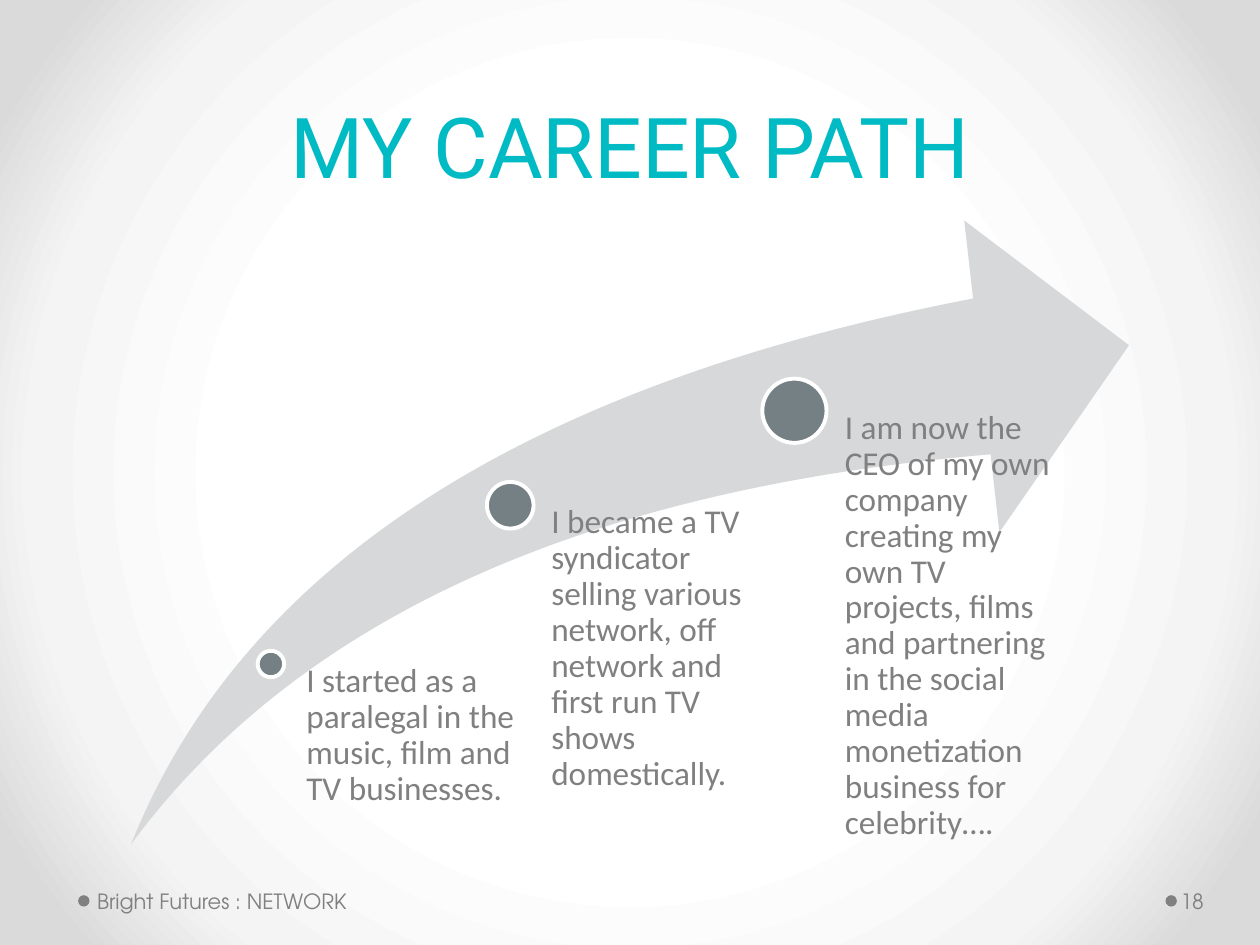
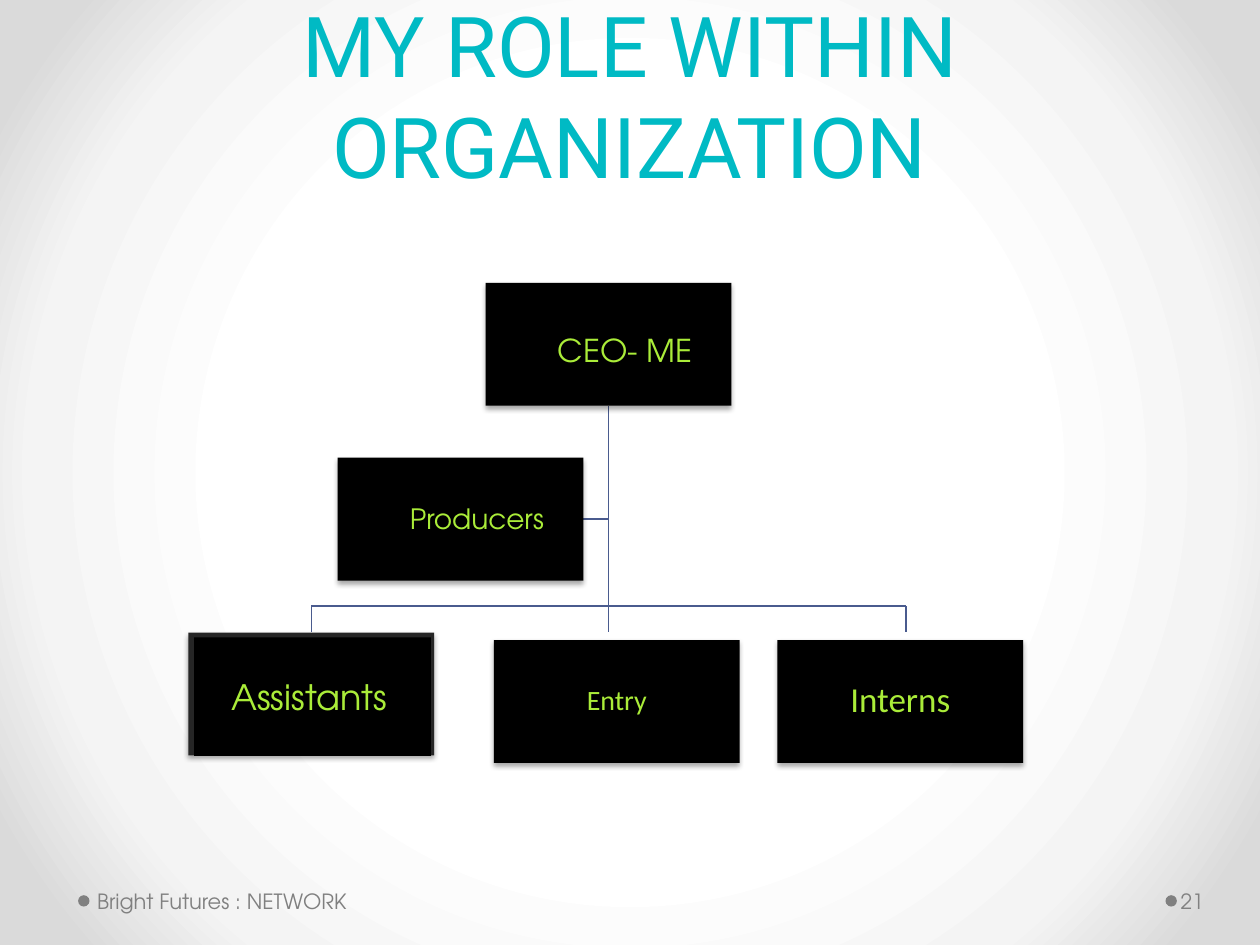
from lxml import etree
from pptx import Presentation
from pptx.dml.color import RGBColor
from pptx.enum.shapes import MSO_CONNECTOR, MSO_SHAPE
from pptx.enum.text import MSO_ANCHOR, PP_ALIGN
from pptx.oxml import parse_xml
from pptx.oxml.ns import nsdecls, qn
from pptx.util import Inches, Pt

COLUMNS, ROWS, CELL = 100, 75, Inches(0.1)
BLANK_LAYOUT = 6

TEAL = RGBColor(0x00, 0xBA, 0xC4)
GREY = RGBColor(0x80, 0x80, 0x80)
SILVER = RGBColor(0xD6, 0xD8, 0xD9)
SLATE = RGBColor(0x75, 0x80, 0x85)
WHITE = RGBColor(0xFF, 0xFF, 0xFF)
MIST = RGBColor(0xF4, 0xF4, 0xF4)
ASH = RGBColor(0xDA, 0xDA, 0xDA)
BLACK = RGBColor(0x00, 0x00, 0x00)
CHARCOAL = RGBColor(0x26, 0x26, 0x26)
LIME = RGBColor(0xAA, 0xEC, 0x39)
NAVY = RGBColor(0x4A, 0x5B, 0x8E)
BACKDROP_STOPS = ((50, WHITE), (76, MIST), (92, ASH))

TITLE_FONT, BODY_FONT, LABEL_FONT = "Roboto", "Calibri", "TeX Gyre Adventor"
OVAL, RECTANGLE, SWOOSH = MSO_SHAPE.OVAL, MSO_SHAPE.RECTANGLE, MSO_SHAPE.SWOOSH_ARROW
STRAIGHT = MSO_CONNECTOR.STRAIGHT
LEFT, CENTER = PP_ALIGN.LEFT, PP_ALIGN.CENTER
TOP, MIDDLE, BOTTOM = MSO_ANCHOR.TOP, MSO_ANCHOR.MIDDLE, MSO_ANCHOR.BOTTOM

TITLE_AREA = (5, 1.5, 90, 14.5)
FOOTER_TOP, FOOTER_HEIGHT = 69.5, 4
ORGANIZER = "Bright Futures : NETWORK"
ARROW_AREA = (10.4, 17.5, 79.2, 49.5)
ARROW_BOTTOM = 67
BOX_WIDTH, BOX_HEIGHT = 19.5, 9.75
TITLE_MARGINS = (1, 0.5, 1, 0.5)
LABEL_MARGINS = (0.5, 0.5, 1, 0.5)
BOX_MARGINS = (0.4, 0.4, 0.4, 0.4)

MILESTONES = (
    (21.5, 52.7, 2.1, 23.2, 18.5,
     "I started as a paralegal in the music, film and TV businesses."),
    (40.5, 40.1, 3.7, 41.8, 19,
     "I became a TV syndicator selling various network, off network and "
     "first run TV shows domestically."),
    (63.05, 32.6, 5.1, 64.35, 19,
     "I am now the CEO of my own company creating my own TV projects, films "
     "and partnering in the social media monetization business for celebrity…."),
)


def cells(*lengths):
    """Turn grid lengths into slide units."""
    return [round(length * CELL) for length in lengths]


def write(shape, text, font, size, color, margins, align=CENTER, anchor=MIDDLE,
          spacing=None):
    """Put one formatted paragraph into a shape."""
    frame = shape.text_frame
    left, top, right, bottom = cells(*margins)
    layout = {"word_wrap": True, "vertical_anchor": anchor, "margin_left": left,
              "margin_top": top, "margin_right": right, "margin_bottom": bottom}
    for name, value in layout.items():
        setattr(frame, name, value)
    paragraph = frame.paragraphs[0]
    paragraph.alignment = align
    paragraph.line_spacing = spacing
    run = paragraph.add_run()
    run.text = text
    for name, value in {"name": font, "size": Pt(size)}.items():
        setattr(run.font, name, value)
    run.font.color.rgb = color


def add_label(slide, area, *content, **layout):
    """Add text without a visible frame."""
    write(slide.shapes.add_textbox(*cells(*area)), *content, **layout)


def add_solid(slide, preset, area, fill, outline=None):
    """Add a flat filled shape, outlined on request."""
    solid = slide.shapes.add_shape(preset, *cells(*area))
    solid.shadow.inherit = False
    solid.fill.solid()
    solid.fill.fore_color.rgb = fill
    if outline is None:
        solid.line.fill.background()
    else:
        solid.line.color.rgb = outline
        solid.line.width = Pt(2.25)
    return solid


def add_dot(slide, center_x, center_y, diameter, fill, outline=None):
    """Add a circle around its centre."""
    radius = diameter / 2
    add_solid(slide, OVAL, (center_x - radius, center_y - radius, diameter, diameter),
              fill, outline)


def add_role_box(slide, left, top, fill=BLACK):
    """Add an organization box with a soft shadow below it."""
    role_box = add_solid(slide, RECTANGLE, (left, top, BOX_WIDTH, BOX_HEIGHT), fill)
    effects = role_box._element.spPr.find(qn("a:effectLst"))
    effects.append(parse_xml(
        f'<a:outerShdw {nsdecls("a")} blurRad="{Pt(3.1)}" dist="{Pt(1.8)}" '
        'dir="5400000" rotWithShape="0"><a:srgbClr val="000000">'
        '<a:alpha val="35000"/></a:srgbClr></a:outerShdw>'))
    return role_box


def add_branch(slide, *ends):
    """Draw one straight line of the organization tree."""
    branch = slide.shapes.add_connector(STRAIGHT, *cells(*ends))
    branch.line.color.rgb = NAVY
    branch.line.width = Pt(0.75)
    etree.SubElement(branch._element.spPr, qn("a:effectLst"))


def paint_backdrop(slide):
    """Fill the background with a radial gradient."""
    slide.background.fill.gradient()
    gradient = slide.element.xpath(".//a:gradFill")[0]
    stops = "".join(f'<a:gs pos="{share * 1000}"><a:srgbClr val="{color}"/></a:gs>'
                    for share, color in BACKDROP_STOPS)
    gradient.getparent().replace(gradient, parse_xml(
        f'<a:gradFill {nsdecls("a")} rotWithShape="1"><a:gsLst>{stops}</a:gsLst>'
        '<a:path path="circle"><a:fillToRect l="50000" t="50000" r="50000" b="50000"/>'
        '</a:path></a:gradFill>'))


def add_base_slide(deck, title, number):
    """Start a slide with backdrop, title and footer."""
    slide = deck.slides.add_slide(deck.slide_layouts[BLANK_LAYOUT])
    paint_backdrop(slide)
    add_label(slide, TITLE_AREA, title, TITLE_FONT, 48, TEAL, TITLE_MARGINS,
              anchor=BOTTOM, spacing=Pt(58))
    footers = ((6.65, 7.2, 31.1, ORGANIZER, LABEL_MARGINS),
               (92.95, 93.4, 6.1, number, (0.3, 0.5, 0.5, 0.5)))
    for dot_x, left, width, text, margins in footers:
        add_dot(slide, dot_x, FOOTER_TOP + FOOTER_HEIGHT / 2, 0.9, GREY)
        add_label(slide, (left, FOOTER_TOP, width, FOOTER_HEIGHT), text, LABEL_FONT,
                  12, GREY, margins, align=LEFT)
    return slide


def add_career_path(slide):
    """Draw the rising arrow and its milestones."""
    arrow = add_solid(slide, SWOOSH, ARROW_AREA, SILVER)
    for index in range(2):
        arrow.adjustments[index] = 0.25
    for x, y, diameter, left, width, story in MILESTONES:
        add_dot(slide, x, y, diameter, SLATE, WHITE)
        add_label(slide, (left, y, width, ARROW_BOTTOM - y), story, BODY_FONT, 19,
                  GREY, (diameter * 0.53, 0, 0, 0), align=LEFT, anchor=TOP, spacing=0.9)


def add_organization(slide):
    """Draw the organization tree with its roles."""
    trunk, fork, reach = 48.3, 48.1, 23.6
    ceo_bottom, team_top, producers_right, producers_middle = 32.2, 50.2, 46.3, 41.2
    add_branch(slide, trunk, ceo_bottom, trunk, team_top)
    add_branch(slide, producers_right, producers_middle, trunk, producers_middle)
    add_branch(slide, trunk - reach, fork, trunk + reach, fork)
    for end in (trunk - reach, trunk + reach):
        add_branch(slide, end, fork, end, team_top)

    add_role_box(slide, trunk - BOX_WIDTH / 2, ceo_bottom - BOX_HEIGHT)
    add_role_box(slide, producers_right - BOX_WIDTH, producers_middle - BOX_HEIGHT / 2)
    add_role_box(slide, trunk - reach - BOX_WIDTH / 2, team_top, CHARCOAL)
    for left, role, size in ((39.2, "Entry", 16), (61.7, "Interns", 20)):
        write(add_role_box(slide, left, 50.8), role, BODY_FONT, size, LIME,
              BOX_MARGINS, spacing=0.9)

    for area, role, size in (((39.2, 23.1, 21.3, 9.4), "CEO- ME", 18),
                             ((26.4, 36.4, 23.4, 9.4), "Producers", 16)):
        add_label(slide, area, role, LABEL_FONT, size, LIME, LABEL_MARGINS)
    assistants = add_solid(slide, RECTANGLE, (15.4, 50.6, 18.8, 9.4), BLACK)
    write(assistants, "Assistants", LABEL_FONT, 20, LIME, LABEL_MARGINS)


def main():
    """Build and save the deck."""
    deck = Presentation()
    deck.slide_width, deck.slide_height = cells(COLUMNS, ROWS)
    add_career_path(add_base_slide(deck, "MY CAREER PATH", "18"))
    add_organization(add_base_slide(deck, "MY ROLE WITHIN ORGANIZATION", "21"))
    deck.save("out.pptx")


if __name__ == "__main__":
    main()
